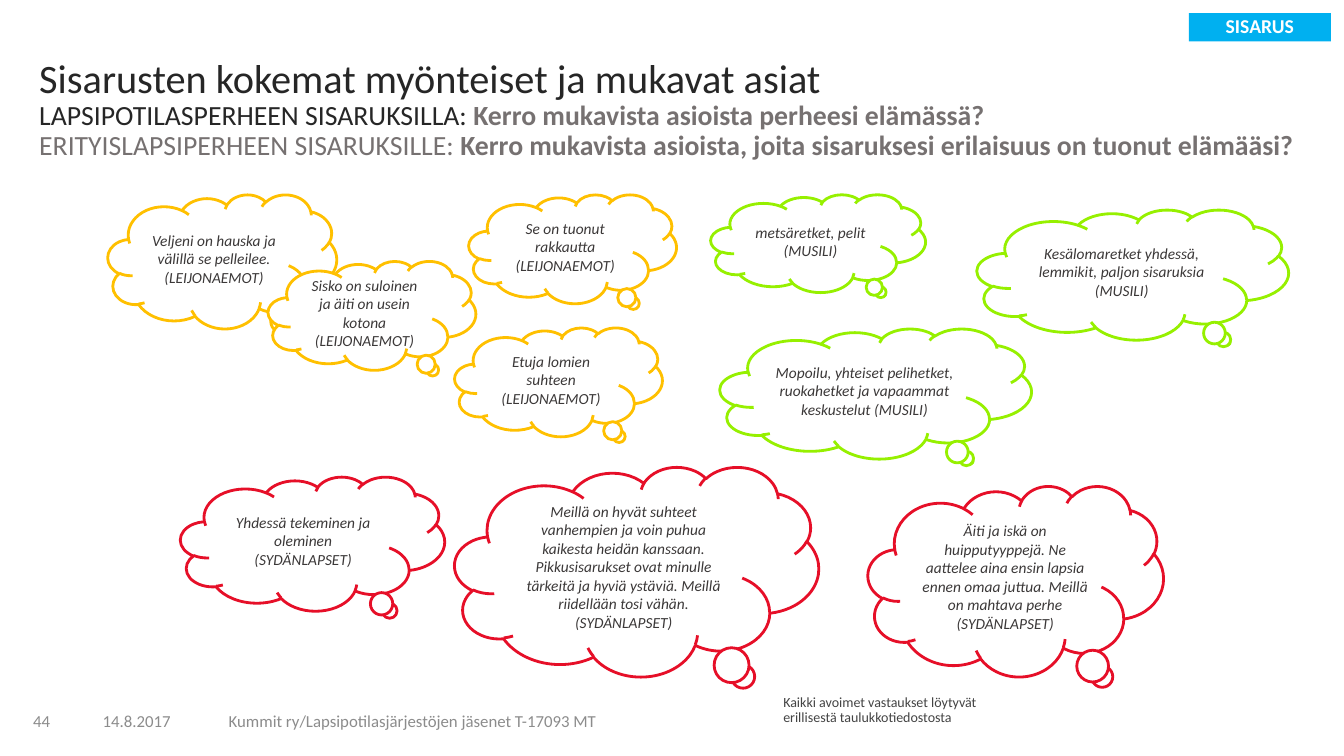
from pptx import Presentation
from pptx.dml.color import RGBColor
from pptx.enum.shapes import MSO_SHAPE
from pptx.enum.text import MSO_ANCHOR, PP_ALIGN
from pptx.util import Inches, Pt

CLOUD, RECTANGLE = MSO_SHAPE.CLOUD_CALLOUT, MSO_SHAPE.RECTANGLE
TOP, MIDDLE = MSO_ANCHOR.TOP, MSO_ANCHOR.MIDDLE
LEFT, CENTER = PP_ALIGN.LEFT, PP_ALIGN.CENTER

FONT = "Calibri"
YELLOW, GREEN, RED = "FFC000", "96F000", "E60F28"
WHITE, BLUE, DARK, GREY = "FFFFFF", "00B0F0", "262626", "767171"
FOOTER_GREY, NOTE_GREY, CLOUD_TEXT = "8C8C8C", "444444", "3B3838"
TAIL = (0.301, 0.516)
FOOTER_TOP, FOOTER_HEIGHT = 6.95, 0.4

FOOTERS = [
    (0.92, 1.01, "14.8.2017"),
    (2.17, 4.56, "Kummit ry/Lapsipotilasjärjestöjen jäsenet T-17093 MT"),
    (0.23, 0.44, "44"),
]
TITLE_LINES = [
    [("Sisarusten kokemat myönteiset ja mukavat asiat", 28.8, DARK, False)],
    [("LAPSIPOTILASPERHEEN SISARUKSILLA: ", 19.8, DARK, False),
     ("Kerro mukavista asioista perheesi elämässä?", 19.8, GREY, True)],
    [("ERITYISLAPSIPERHEEN SISARUKSILLE: ", 19.8, GREY, False),
     ("Kerro mukavista asioista, joita sisaruksesi erilaisuus on tuonut elämääsi?",
      19.8, GREY, True)],
]
TAG = "SISARUS"
NOTE = "Kaikki avoimet vastaukset löytyvät erillisestä taulukkotiedostosta"
CLOUDS = [
    ((1.07, 1.93, 2.27, 1.33), YELLOW,
     ["Veljeni on hauska ja välillä se pelleilee.", "(LEIJONAEMOT)"]),
    ((9.69, 2.08, 3.09, 1.29), GREEN,
     ["Kesälomaretket yhdessä, lemmikit, paljon sisaruksia (MUSILI)"]),
    ((7.05, 1.93, 2.13, 0.97), GREEN, ["metsäretket, pelit", "(MUSILI)"]),
    ((4.51, 4.63, 3.61, 2.08), RED,
     ["Meillä on hyvät suhteet vanhempien ja voin puhua kaikesta heidän kanssaan. "
      "Pikkusisarukset ovat minulle tärkeitä ja hyviä ystäviä. "
      "Meillä riidellään tosi vähän.", "(SYDÄNLAPSET)"]),
    ((1.79, 4.73, 2.62, 1.33), RED,
     ["Yhdessä tekeminen ja oleminen", "(SYDÄNLAPSET)"]),
    ((2.66, 2.59, 2.06, 1.08), YELLOW,
     ["Sisko on suloinen ja äiti on usein kotona", "(LEIJONAEMOT)"]),
    ((4.65, 1.93, 2.06, 1.08), YELLOW, ["Se on tuonut rakkautta", "(LEIJONAEMOT)"]),
    ((4.51, 3.25, 2.06, 1.08), YELLOW, ["Etuja lomien suhteen", "(LEIJONAEMOT)"]),
    ((7.14, 3.26, 3.09, 1.29), GREEN,
     ["Mopoilu, yhteiset pelihetket, ruokahetket ja vapaammat keskustelut (MUSILI)"]),
    ((8.61, 4.82, 2.93, 1.89), RED,
     ["Äiti ja iskä on huipputyyppejä. Ne aattelee aina ensin lapsia ennen omaa "
      "juttua. Meillä on mahtava perhe", "(SYDÄNLAPSET)"]),
]


def color(value):
    return RGBColor.from_string(value)


def add_span(para, text, size, hue, bold=False, italic=False):
    span = para.add_run()
    span.text = text
    font = span.font
    font.name, font.size, font.bold, font.italic = FONT, Pt(size), bold, italic
    font.color.rgb = color(hue)


def set_frame(box, anchor):
    box.text_frame.word_wrap = True
    box.text_frame.vertical_anchor = anchor
    return box.text_frame


def start_para(frame, index=0, align=LEFT, spacing=1.0):
    para = frame.add_paragraph() if index else frame.paragraphs[0]
    para.alignment, para.line_spacing = align, spacing
    return para


def add_text(page, place, anchor=TOP):
    return set_frame(page.shapes.add_textbox(*map(Inches, place)), anchor)


def add_shape(page, kind, place, fill, line=None):
    shape = page.shapes.add_shape(kind, *map(Inches, place))
    shape.shadow.inherit = False
    shape.fill.solid()
    shape.fill.fore_color.rgb = color(fill)
    if line:
        shape.line.color.rgb = color(line)
        shape.line.width = Pt(2)
    else:
        shape.line.fill.background()
    return shape


def add_cloud(page, place, line, texts):
    cloud = add_shape(page, CLOUD, place, WHITE, line)
    for index, offset in enumerate(TAIL):
        cloud.adjustments[index] = offset
    frame = set_frame(cloud, MIDDLE)
    for index, text in enumerate(texts):
        add_span(start_para(frame, index, CENTER), text, 11, CLOUD_TEXT, italic=True)


def main():
    deck = Presentation()
    deck.slide_width, deck.slide_height = Inches(13.33), Inches(7.5)
    page = deck.slides.add_slide(deck.slide_layouts[6])

    for left, width, text in FOOTERS:
        frame = add_text(page, (left, FOOTER_TOP, width, FOOTER_HEIGHT), MIDDLE)
        add_span(start_para(frame), text, 12, FOOTER_GREY)

    title = start_para(add_text(page, (0.29, 0.53, 12.82, 1.14)), spacing=0.9)
    for index, line in enumerate(TITLE_LINES):
        if index:
            title.add_line_break()
        for span in line:
            add_span(title, *span)

    tag = add_shape(page, RECTANGLE, (11.79, 0.13, 1.41, 0.28), BLUE)
    tag_para = start_para(set_frame(tag, MIDDLE), align=CENTER, spacing=0.9)
    add_span(tag_para, TAG, 14, WHITE, bold=True)

    for place, line, texts in CLOUDS:
        add_cloud(page, place, line, texts)

    note = start_para(add_text(page, (7.67, 6.85, 2.25, 0.41)), spacing=0.9)
    add_span(note, NOTE, 10, NOTE_GREY)

    deck.save("out.pptx")


if __name__ == "__main__":
    main()
